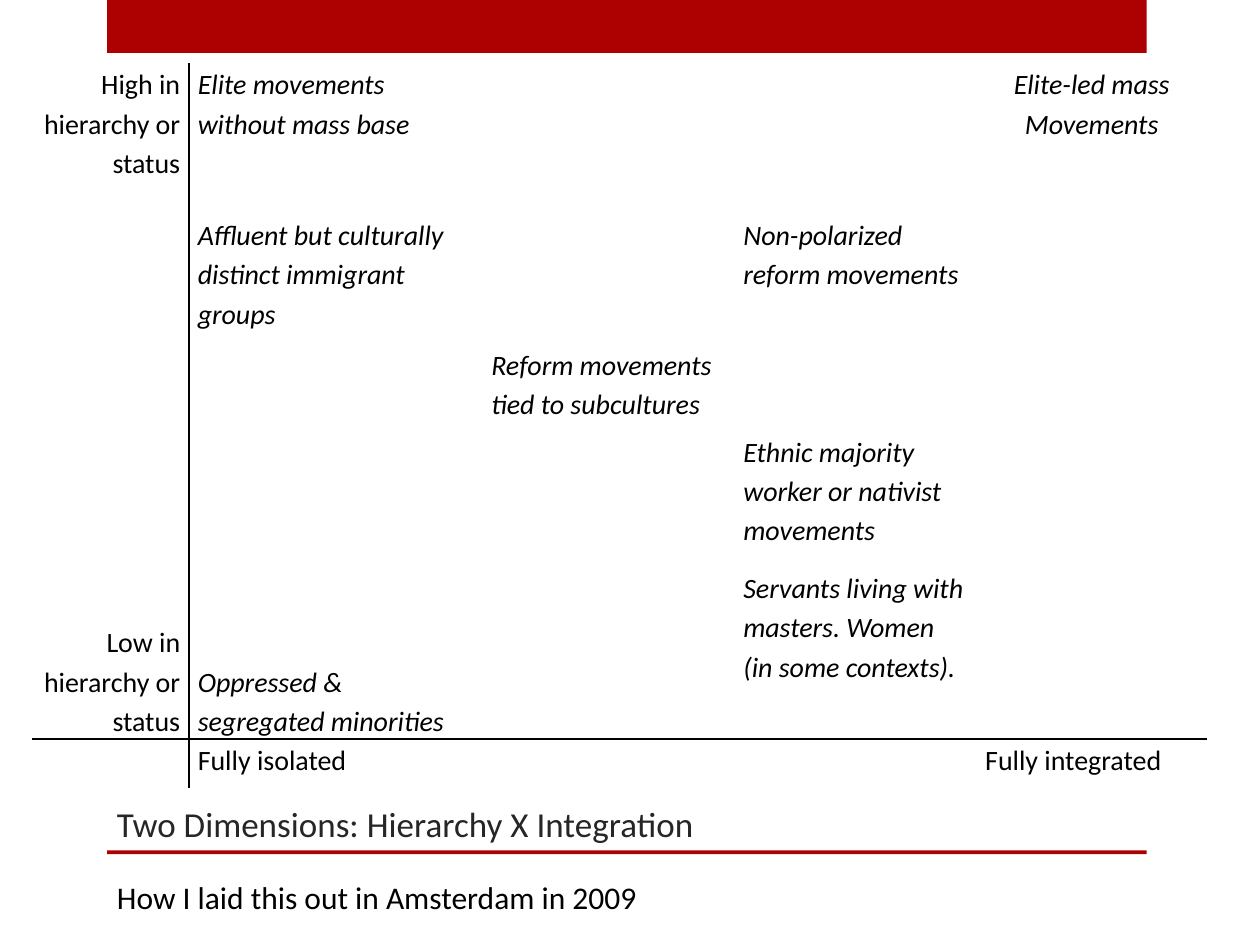
from lxml.etree import SubElement
from pptx import Presentation
from pptx.dml.color import RGBColor
from pptx.enum.shapes import MSO_SHAPE
from pptx.enum.text import MSO_ANCHOR, PP_ALIGN
from pptx.oxml.ns import qn
from pptx.util import Inches, Pt

RED = RGBColor(0xAD, 0x01, 0x01)
BLACK = RGBColor(0, 0, 0)
CHARCOAL = RGBColor(0x26, 0x26, 0x26)
FONT = "Calibri"

COLUMN_WIDTHS = [1.25, 2.33, 2, 1.92, 1.83]
ROW_HEIGHTS = [0.69, 0.26, 1.03, 0.69, 1.08, 1.37, 0.39]
AXIS_ROW = len(ROW_HEIGHTS) - 1
MOVEMENTS = {
    (0, 0): "High in hierarchy or status",
    (0, 1): "Elite movements without mass base",
    (0, 4): "Elite-led mass Movements",
    (2, 1): "Affluent but culturally distinct immigrant groups",
    (2, 3): "Non-polarized reform movements",
    (3, 2): "Reform movements tied to subcultures",
    (4, 3): "Ethnic majority worker or nativist movements",
    (5, 0): "Low in hierarchy or status",
    (5, 1): "Oppressed & segregated minorities",
    (5, 3): "Servants living with masters. Women (in some contexts).",
    (6, 1): "Fully isolated",
    (6, 4): "Fully integrated",
}
ALIGNMENTS = {(0, 0): PP_ALIGN.RIGHT, (5, 0): PP_ALIGN.RIGHT, (0, 4): PP_ALIGN.CENTER}
BOTTOM_CELLS = {(5, 0), (5, 1)}


def add_bar(slide, left, top, width, height):
    """Draw a plain red bar."""
    bar = slide.shapes.add_shape(
        MSO_SHAPE.RECTANGLE, Inches(left), Inches(top), Inches(width), Inches(height)
    )
    bar.shadow.inherit = False
    bar.fill.solid()
    bar.fill.fore_color.rgb = RED
    bar.line.fill.background()


def style_font(font, size, color, italic=False):
    """Set the typeface, size, colour and slant of a font."""
    font.name = FONT
    font.size = Pt(size)
    font.color.rgb = color
    font.italic = italic


def add_text(slide, left, top, width, height, text, size, color, anchor, wrap):
    """Place one line of text in a box."""
    box = slide.shapes.add_textbox(
        Inches(left), Inches(top), Inches(width), Inches(height)
    )
    frame = box.text_frame
    frame.word_wrap = wrap
    frame.vertical_anchor = anchor
    frame.text = text
    style_font(frame.paragraphs[0].font, size, color)


def set_borders(cell, row, column):
    """Draw the axis lines that touch a cell and hide its other edges."""
    edges = {
        "a:lnL": column == 1,
        "a:lnR": column == 0,
        "a:lnT": row == AXIS_ROW,
        "a:lnB": row == AXIS_ROW - 1,
    }
    properties = cell._tc.get_or_add_tcPr()
    for position, (tag, visible) in enumerate(edges.items()):
        line = properties.makeelement(qn(tag), {"w": str(Pt(1))})
        properties.insert(position, line)
        if visible:
            fill = SubElement(line, qn("a:solidFill"))
            SubElement(fill, qn("a:srgbClr"), val=str(BLACK))
        else:
            SubElement(line, qn("a:noFill"))


def fill_cell(cell, row, column):
    """Write and format one cell of the movement grid."""
    place = (row, column)
    cell.fill.background()
    cell.margin_left = cell.margin_right = Inches(0.07)
    cell.margin_top = cell.margin_bottom = 0
    cell.vertical_anchor = MSO_ANCHOR.BOTTOM if place in BOTTOM_CELLS else MSO_ANCHOR.TOP
    paragraph = cell.text_frame.paragraphs[0]
    if place in MOVEMENTS:
        paragraph.text = MOVEMENTS[place]
        paragraph.alignment = ALIGNMENTS.get(place, PP_ALIGN.LEFT)
        paragraph.line_spacing = 1.15
        style_font(paragraph.font, 16, BLACK, column > 0 and row < AXIS_ROW)
    else:
        SubElement(paragraph._p, qn("a:endParaRPr"), sz="1200")
    set_borders(cell, row, column)


def add_movement_grid(slide, left, top, width, height):
    """Build the table of movements by hierarchy and integration."""
    table = slide.shapes.add_table(
        len(ROW_HEIGHTS), len(COLUMN_WIDTHS),
        Inches(left), Inches(top), Inches(width), Inches(height),
    ).table
    table.first_row = False
    table.horz_banding = False
    for column, column_width in zip(table.columns, COLUMN_WIDTHS):
        column.width = Inches(column_width)
    for row, row_height in zip(table.rows, ROW_HEIGHTS):
        row.height = Inches(row_height)
    for row in range(len(ROW_HEIGHTS)):
        for column in range(len(COLUMN_WIDTHS)):
            fill_cell(table.cell(row, column), row, column)


def main():
    """Build the slide and save it."""
    presentation = Presentation()
    presentation.slide_width = Inches(10)
    presentation.slide_height = Inches(7.5)
    slide = presentation.slides.add_slide(presentation.slide_layouts[6])
    add_bar(slide, 0.85, 0, 8.25, 0.42)
    add_bar(slide, 0.85, 6.75, 8.25, 0.03)
    add_movement_grid(slide, 0.25, 0.5, 9.33, 5.78)
    add_text(slide, 0.83, 6.17, 7.42, 0.58, "Two Dimensions: Hierarchy X Integration",
             20, CHARCOAL, MSO_ANCHOR.BOTTOM, True)
    add_text(slide, 0.83, 6.92, 4.45, 0.4, "How I laid this out in Amsterdam in 2009",
             18, BLACK, MSO_ANCHOR.TOP, False)
    presentation.save("out.pptx")


if __name__ == "__main__":
    main()
